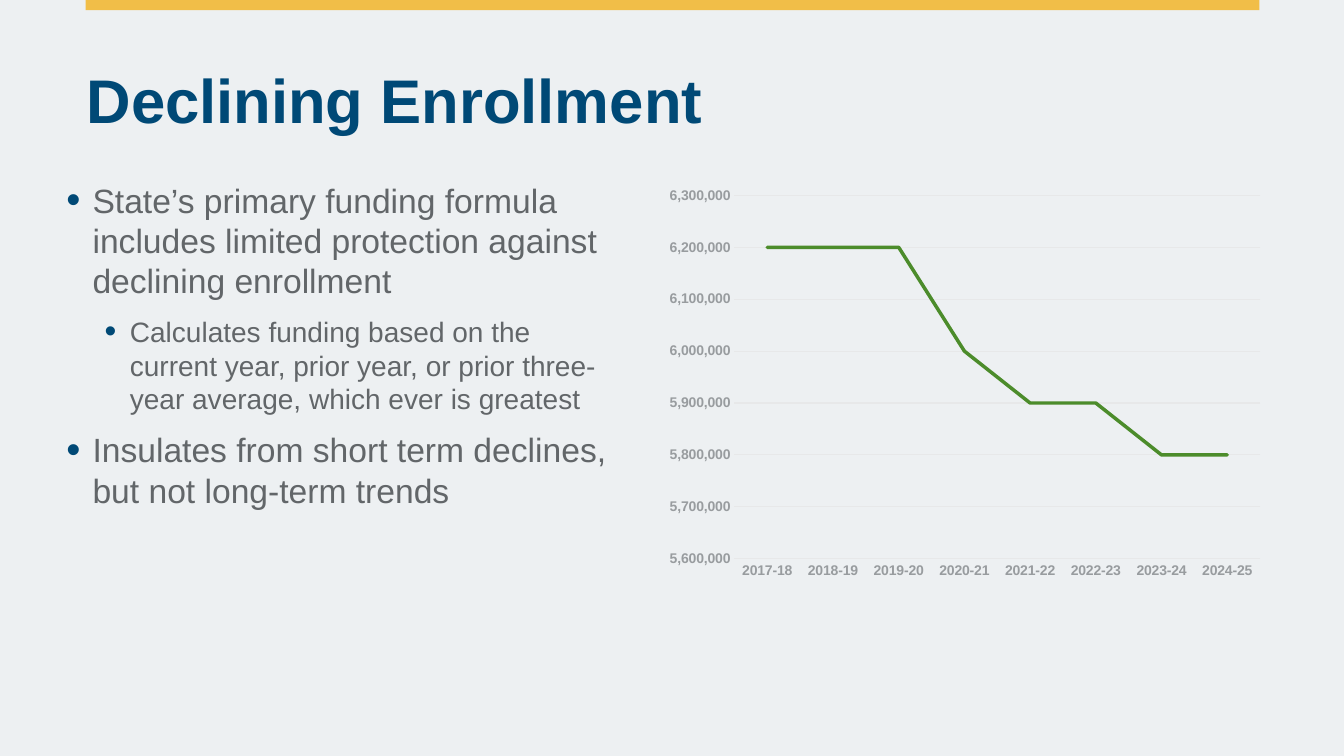
from lxml.etree import SubElement
from pptx import Presentation
from pptx.chart.data import CategoryChartData
from pptx.dml.color import RGBColor
from pptx.enum.chart import XL_CHART_TYPE, XL_MARKER_STYLE, XL_TICK_MARK
from pptx.enum.shapes import MSO_SHAPE
from pptx.enum.text import MSO_ANCHOR
from pptx.oxml.ns import qn
from pptx.util import Inches, Pt

NAVY, GOLD, GREEN = "004976", "F1BE48", "4C8C2B"
TEXT, LABEL, GRID, PAPER = "626669", "989C9F", "E7E8E9", "EDF0F2"
POINTS = [
    (0, "State’s primary funding formula includes limited protection against declining enrollment"),
    (1, "Calculates funding based on the current year, prior year, or prior three-year average, which ever is greatest"),
    (0, "Insulates from short term declines, but not long-term trends"),
]
LEVELS = [(24, 0.26, 0.26), (20, 0.63, 0.25)]
PUPILS = {
    "2017-18": 6200000, "2018-19": 6200000, "2019-20": 6200000, "2020-21": 6000000,
    "2021-22": 5900000, "2022-23": 5900000, "2023-24": 5800000, "2024-25": 5800000,
}


def color(code):
    """Return the colour for a hex string."""
    return RGBColor.from_string(code)


def style(font, size, code, bold=False):
    """Set the face, size, colour and weight of a font."""
    font.name, font.size, font.bold = "Arial", Pt(size), bold
    font.color.rgb = color(code)


def stroke(line, code, width):
    """Set the colour and width of a line."""
    line.color.rgb, line.width = color(code), Pt(width)


def add_bar(slide, *box):
    """Draw the gold bar at the top edge."""
    bar = slide.shapes.add_shape(MSO_SHAPE.RECTANGLE, *map(Inches, box))
    bar.shadow.inherit = False
    bar.fill.solid()
    bar.fill.fore_color.rgb = color(GOLD)
    bar.line.fill.background()


def add_frame(slide, box, insets):
    """Add a wrapping text box and return its text frame."""
    frame = slide.shapes.add_textbox(*map(Inches, box)).text_frame
    frame.word_wrap = True
    (frame.margin_left, frame.margin_top,
     frame.margin_right, frame.margin_bottom) = map(Inches, insets)
    return frame


def add_title(slide, text):
    """Add the slide heading."""
    frame = add_frame(slide, (0.86, -0.16, 11.5, 1.6), (0, 0, 0, 0.1))
    frame.vertical_anchor = MSO_ANCHOR.BOTTOM
    para = frame.paragraphs[0]
    para.text, para.line_spacing = text, 0.8
    style(para.font, 44, NAVY, True)


def add_bullet(para, left, hang):
    """Give a paragraph a navy bullet with a hanging indent."""
    props = para._p.get_or_add_pPr()
    props.set("marL", str(Inches(left)))
    props.set("indent", str(-Inches(hang)))
    tint = SubElement(props, qn("a:buClr"))
    SubElement(tint, qn("a:srgbClr"), val=NAVY)
    SubElement(props, qn("a:buSzPct"), val="120000")
    SubElement(props, qn("a:buFont"), typeface="Arial")
    SubElement(props, qn("a:buChar"), char="•")


def add_points(slide, points):
    """Add the bulleted list."""
    frame = add_frame(slide, (0.56, 1.78, 5.61, 5.21), (0.1, 0, 0.1, 0.1))
    for index, (level, text) in enumerate(points):
        para = frame.add_paragraph() if index else frame.paragraphs[0]
        size, left, hang = LEVELS[level]
        para.text, para.level = text, level
        if index:
            para.space_before = Pt(10)
        add_bullet(para, left, hang)
        style(para.font, size, TEXT)


def add_trend(slide, pupils):
    """Add the line chart of enrollment by year."""
    data = CategoryChartData(number_format="#,##0")
    data.categories = list(pupils)
    data.add_series("Series 1", list(pupils.values()))
    box = map(Inches, (6.52, 1.78, 6.1, 4.04))
    chart = slide.shapes.add_chart(XL_CHART_TYPE.LINE, *box, data).chart
    chart.has_legend = chart.has_title = False
    style(chart.font, 10, TEXT)
    plot = chart.plots[0]
    plot.vary_by_categories = False
    trend = plot.series[0]
    trend.smooth = False
    trend.marker.style = XL_MARKER_STYLE.NONE
    stroke(trend.format.line, GREEN, 2.5)
    trend._element.find(".//" + qn("a:ln")).set("cap", "rnd")
    years, counts = chart.category_axis, chart.value_axis
    for axis in (years, counts):
        axis.major_tick_mark = axis.minor_tick_mark = XL_TICK_MARK.NONE
        style(axis.tick_labels.font, 10, LABEL, True)
    stroke(years.format.line, GRID, 0.75)
    counts.format.line.fill.background()
    stroke(counts.major_gridlines.format.line, GRID, 0.75)
    counts.minimum_scale, counts.maximum_scale = 5600000, 6300000
    counts.major_unit = 100000
    counts.tick_labels.number_format = "#,##0"
    counts.tick_labels.number_format_is_linked = False


def main():
    """Build and save the slide."""
    deck = Presentation()
    deck.slide_width, deck.slide_height = Inches(13.33), Inches(7.5)
    slide = deck.slides.add_slide(deck.slide_layouts[6])
    slide.background.fill.solid()
    slide.background.fill.fore_color.rgb = color(PAPER)
    add_bar(slide, 0.85, 0, 11.64, 0.1)
    add_title(slide, "Declining Enrollment")
    add_points(slide, POINTS)
    add_trend(slide, PUPILS)
    deck.save("out.pptx")


if __name__ == "__main__":
    main()
